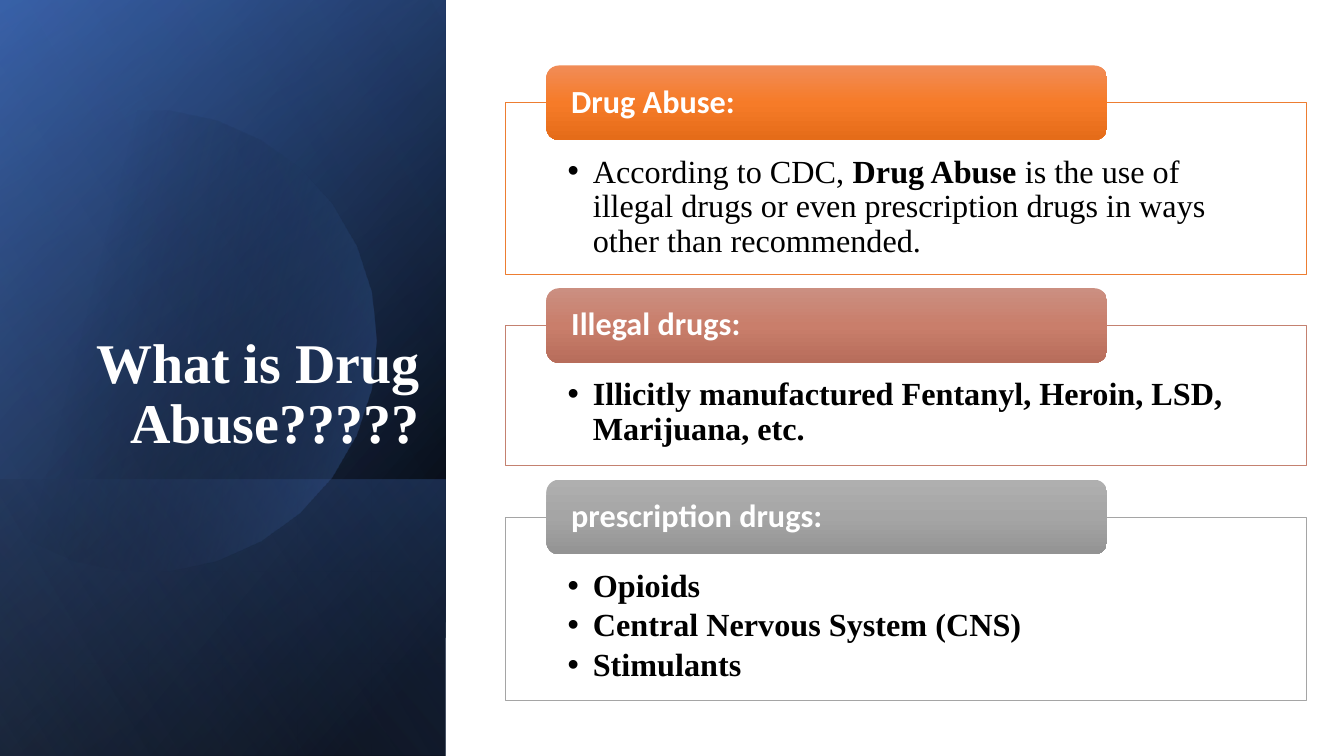
"""Build the slide that defines drug abuse, with a dark title band and three panels."""
from dataclasses import dataclass
from math import cos, radians, sin

from pptx import Presentation
from pptx.dml.color import RGBColor
from pptx.enum.shapes import MSO_SHAPE as Kind
from pptx.enum.text import MSO_ANCHOR as Anchor, MSO_AUTO_SIZE as Fit, PP_ALIGN as Align
from pptx.oxml.ns import qn
from pptx.oxml.xmlchemy import OxmlElement as Node
from pptx.util import Inches, Pt

SERIF, SANS = "Times New Roman", "Calibri"


@dataclass
class Stop:
    pos: int
    tone: str
    alpha: int = 100


@dataclass
class Band:
    box: tuple[float, float, float, float]
    angle: int
    stops: list[Stop]


@dataclass
class Panel:
    head: str
    items: list[list[tuple[str, bool]]]
    height: float
    line: str
    tones: tuple[str, str, str]


FULL = (-1.54, 1.54, 7.5, 4.42)
BANDS = [
    Band(FULL, 50, [Stop(8, "000000"), Stop(100, "2F5597")]),
    Band(FULL, 30, [Stop(0, "000000", 0), Stop(99, "4472C4", 46)]),
    Band((0.84, 3.92, 2.74, 4.42), 130, [Stop(2, "4472C4", 29), Stop(100, "000000", 30)]),
]
DISC = [Stop(29, "000000", 0), Stop(100, "4472C4", 43)]
GLOW = Band(FULL, 120, [Stop(0, "000000", 0), Stop(99, "8FAADC", 11)])

PANELS = [
    Panel("Drug Abuse:",
          [[("According to CDC, ", False), ("Drug Abuse ", True),
            ("is the use of illegal drugs or even prescription drugs in ways "
             "other than recommended.", False)]],
          1.7, "ED7D31", ("F18C57", "F67B28", "E56C19")),
    Panel("Illegal drugs:",
          [[("Illicitly manufactured Fentanyl, Heroin, LSD, Marijuana, etc.", True)]],
          1.39, "C48170", ("CB8F81", "C97E6B", "B76D5B")),
    Panel("prescription drugs:",
          [[("Opioids", True)], [("Central Nervous System (CNS)", True)],
           [("Stimulants", True)]],
          1.82, "A5A5A5", ("AFAFAF", "A5A5A5", "939393")),
]


def color(tone: str) -> RGBColor:
    return RGBColor.from_string(tone)


def add_alpha(node, alpha: int) -> None:
    if alpha < 100:
        mark = Node("a:alpha")
        mark.set("val", str(alpha * 1000))
        node.append(mark)


def shade(shape, stops: list[Stop], angle: int) -> None:
    shape.shadow.inherit = False
    shape.line.fill.background()
    shape.fill.background()
    grad, group, lin = Node("a:gradFill"), Node("a:gsLst"), Node("a:lin")
    grad.set("rotWithShape", "1")
    for stop in stops:
        mark, tone = Node("a:gs"), Node("a:srgbClr")
        mark.set("pos", str(stop.pos * 1000))
        tone.set("val", stop.tone)
        add_alpha(tone, stop.alpha)
        mark.append(tone)
        group.append(mark)
    lin.set("ang", str(angle * 60000))
    lin.set("scaled", "0")
    grad.append(group)
    grad.append(lin)
    props = shape._element.spPr
    props.replace(props.find(qn("a:noFill")), grad)


def place(shape, left: float, top: float, width: float, height: float) -> None:
    shape.left, shape.top = Inches(left), Inches(top)
    shape.width, shape.height = Inches(width), Inches(height)


def write(shape, paras: list[list[tuple[str, bool]]], *, font: str, size: float, tone: str,
          anchor: Anchor, align: Align = Align.LEFT, inset=(0.1, 0.05, 0.1, 0.05),
          after: float = 0, bullet: bool = False) -> None:
    frame = shape.text_frame
    frame.word_wrap, frame.auto_size = True, Fit.NONE
    frame.vertical_anchor = anchor
    (frame.margin_left, frame.margin_top,
     frame.margin_right, frame.margin_bottom) = map(Inches, inset)
    for num, runs in enumerate(paras):
        para = frame.add_paragraph() if num else frame.paragraphs[0]
        para.alignment, para.line_spacing = align, 0.9
        para.space_before, para.space_after = Pt(0), Pt(after)
        if bullet:
            props = para._p.get_or_add_pPr()
            props.set("marL", str(Inches(0.25)))
            props.set("indent", str(-Inches(0.25)))
            mark = Node("a:buChar")
            mark.set("char", "•")
            props.append(mark)
        for text, bold in runs:
            run = para.add_run()
            run.text = text
            run.font.name, run.font.size, run.font.bold = font, Pt(size), bold
            run.font.color.rgb = color(tone)


def draw_band(slide, band: Band) -> None:
    shape = slide.shapes.add_shape(Kind.RECTANGLE, *map(Inches, band.box))
    shape.rotation = 90
    shape._element.spPr.xfrm.set("flipH", "1")
    shade(shape, band.stops, band.angle)


def draw_disc(slide) -> None:
    radius, mid_x, mid_y = 2.29, 1.44, 3.38
    rim = [(Inches(mid_x + radius * cos(radians(deg))),
            Inches(mid_y + radius * sin(radians(deg))))
           for deg in range(-132, 133, 12)]
    path = slide.shapes.build_freeform(*rim[0])
    path.add_line_segments(rim[1:], close=True)
    shade(path.convert_to_shape(), DISC, 14)


def draw_panel(slide, holder, panel: Panel, top: float) -> None:
    slide.shapes._spTree.append(holder._element)
    place(holder, 5.01, top, 7.95, panel.height)
    holder.fill.solid()
    holder.fill.fore_color.rgb = color("FFFFFF")
    add_alpha(holder._element.spPr.find(qn("a:solidFill"))[0], 90)
    holder.line.color.rgb = color(panel.line)
    holder.line.width = Pt(0.5)
    write(holder, panel.items, font=SERIF, size=23, tone="000000", anchor=Anchor.TOP,
          inset=(0.62, 0.52, 0.62, 0.18), after=3.5, bullet=True)

    label = slide.shapes.add_shape(
        Kind.ROUNDED_RECTANGLE, *map(Inches, (5.42, top - 0.37, 5.56, 0.74)))
    shade(label, [Stop(num * 50, tone) for num, tone in enumerate(panel.tones)], 90)
    write(label, [[(panel.head, True)]], font=SANS, size=23, tone="FFFFFF",
          anchor=Anchor.MIDDLE, inset=(0.21, 0, 0.21, 0))


def main() -> None:
    deck = Presentation()
    deck.slide_width, deck.slide_height = Inches(13.33), Inches(7.5)
    slide = deck.slides.add_slide(deck.slide_layouts.get_by_name("Comparison"))
    title, *holders, spare = slide.placeholders
    spare._element.getparent().remove(spare._element)

    for band in BANDS:
        draw_band(slide, band)
    draw_disc(slide)
    draw_band(slide, GLOW)

    slide.shapes._spTree.append(title._element)
    place(title, 0.25, 1.83, 4.01, 2.74)
    write(title, [[("What is Drug Abuse?????", True)]], font=SERIF, size=40,
          tone="FFFFFF", anchor=Anchor.BOTTOM, align=Align.RIGHT)

    top = 1.02
    for holder, panel in zip(holders, PANELS):
        draw_panel(slide, holder, panel, top)
        top += panel.height + 0.51
    deck.save("out.pptx")


if __name__ == "__main__":
    main()
